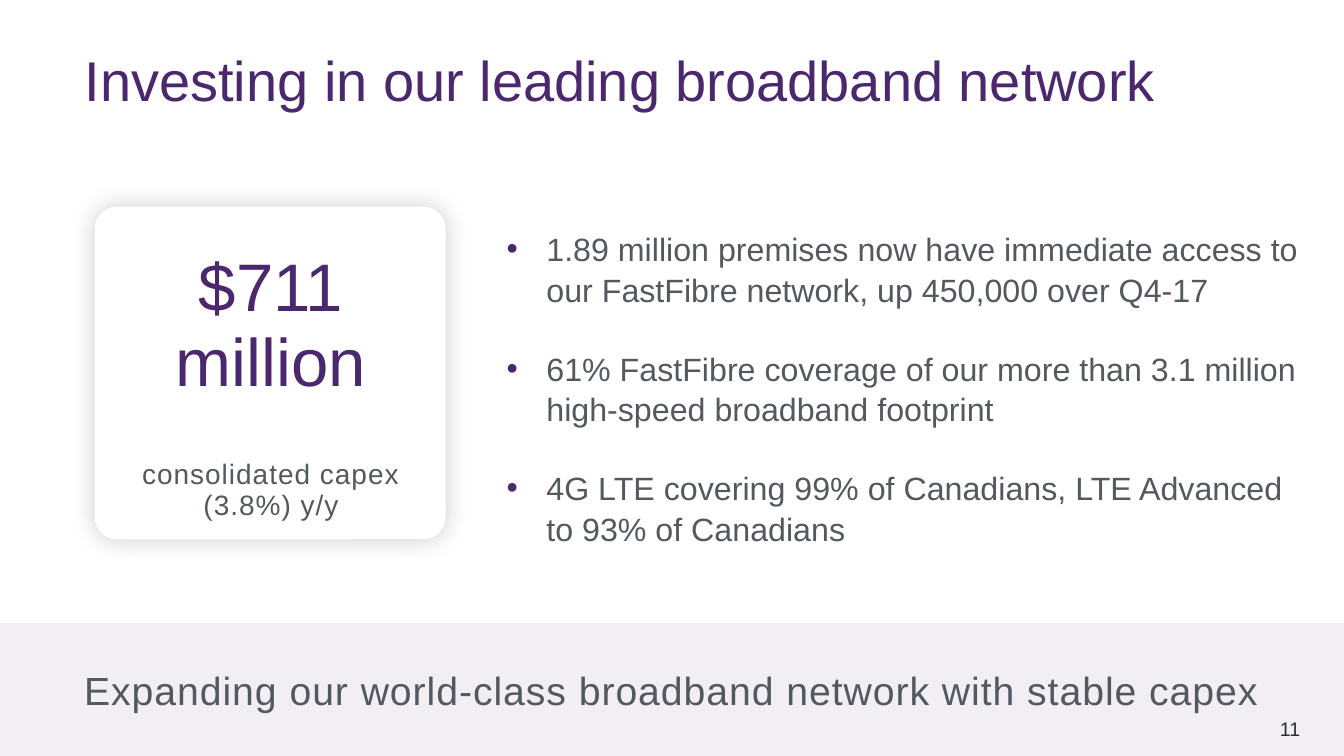
from lxml import etree
from pptx import Presentation
from pptx.dml.color import RGBColor
from pptx.enum.shapes import MSO_SHAPE
from pptx.enum.text import MSO_ANCHOR, PP_ALIGN
from pptx.oxml.ns import qn
from pptx.util import Cm, Pt

RECTANGLE, ROUNDED = MSO_SHAPE.RECTANGLE, MSO_SHAPE.ROUNDED_RECTANGLE
TOP, MIDDLE = MSO_ANCHOR.TOP, MSO_ANCHOR.MIDDLE
LEFT, CENTER, RIGHT = PP_ALIGN.LEFT, PP_ALIGN.CENTER, PP_ALIGN.RIGHT
TITLE_ONLY = 5
PLAIN_TABLE = "{2D5ABB26-0587-4C30-8999-92F81FD0307C}"
FONT = "Arial"
COLORS = {
    "purple": "4B286D",
    "grey": "54595F",
    "ink": "2A2C2E",
    "band": "F2EFF4",
    "white": "FFFFFF",
    "shadow": "000000",
}


def add_xml(parent, tag, **attributes):
    return etree.SubElement(parent, qn(tag), attributes)


class SlideBuilder:
    def __init__(self, presentation):
        self.slide = presentation.slides.add_slide(
            presentation.slide_layouts[TITLE_ONLY])

    def add_lines(self, frame, lines, size, color, align=LEFT, anchor=TOP, spacing=0):
        """Fill a text frame with one paragraph per line."""
        frame.word_wrap = True
        frame.vertical_anchor = anchor
        for index, line in enumerate(lines):
            paragraph = frame.paragraphs[0] if index == 0 else frame.add_paragraph()
            paragraph.alignment = align
            run = paragraph.add_run()
            run.text = line
            run.font.name = FONT
            run.font.size = Pt(size)
            run.font.color.rgb = RGBColor.from_string(COLORS[color])
            if spacing:
                run._r.get_or_add_rPr().set("spc", str(spacing))

    def title(self, box, text):
        shape = self.slide.shapes.title
        shape.left, shape.top, shape.width, shape.height = map(Cm, box)
        self.add_lines(shape.text_frame, [text], 40, "purple")

    def panel(self, kind, box, color):
        shape = self.slide.shapes.add_shape(kind, *map(Cm, box))
        shape.shadow.inherit = False
        shape.fill.solid()
        shape.fill.fore_color.rgb = RGBColor.from_string(COLORS[color])
        shape.line.fill.background()
        return shape

    def card(self, box):
        """White rounded card with a soft shadow on all sides."""
        shape = self.panel(ROUNDED, box, "white")
        shape.adjustments[0] = 0.067
        effects = shape._element.spPr.find(qn("a:effectLst"))
        shadow = add_xml(effects, "a:outerShdw", blurRad=str(Pt(18)),
                         dist="0", dir="0", algn="ctr", rotWithShape="0")
        shade = add_xml(shadow, "a:srgbClr", val=COLORS["shadow"])
        add_xml(shade, "a:alpha", val="20000")

    def text(self, box, lines, size, color, **style):
        frame = self.slide.shapes.add_textbox(*map(Cm, box)).text_frame
        self.add_lines(frame, lines, size, color, **style)
        return frame

    def bullets(self, box, lines):
        frame = self.text(box, lines, 23, "grey")
        for paragraph in frame.paragraphs:
            paragraph.line_spacing = 1.05
            paragraph.space_after = Pt(27.5)
            properties = paragraph._p.get_or_add_pPr()
            properties.set("marL", str(Cm(1)))
            properties.set("indent", str(-Cm(1)))
            bullet_color = add_xml(properties, "a:buClr")
            add_xml(bullet_color, "a:srgbClr", val=COLORS["purple"])
            add_xml(properties, "a:buFont", typeface=FONT)
            add_xml(properties, "a:buChar", char="•")

    def figure_table(self, left, top, width, rows):
        """One-column table; a row is (height, text style or None)."""
        height = sum(row_height for row_height, _ in rows)
        table_frame = self.slide.shapes.add_table(
            len(rows), 1, *map(Cm, (left, top, width, height)))
        table = table_frame.table
        table.first_row = table.horz_banding = False
        table._tbl.tblPr.find(qn("a:tableStyleId")).text = PLAIN_TABLE
        for index, (row_height, style) in enumerate(rows):
            table.rows[index].height = Cm(row_height)
            cell = table.cell(index, 0)
            cell.fill.background()
            cell.margin_left = cell.margin_right = Cm(0.38)
            cell.margin_top = cell.margin_bottom = Cm(0.13 if style else 0)
            if style:
                cell.vertical_anchor = MIDDLE
                self.add_lines(cell.text_frame, align=CENTER, **style)
            else:
                add_xml(cell.text_frame.paragraphs[0]._p, "a:endParaRPr", sz="800")


def main():
    presentation = Presentation()
    presentation.slide_width, presentation.slide_height = Cm(33.87), Cm(19.05)
    builder = SlideBuilder(presentation)

    # Closing message band
    band = builder.panel(RECTANGLE, (0, 15.7, 33.87, 3.35), "band")
    builder.add_lines(band.text_frame,
                      ["Expanding our world-class broadband network with stable capex"],
                      28, "grey", align=CENTER, anchor=MIDDLE, spacing=70)

    # Title
    builder.title((1.88, 1.02, 31.52, 1.96),
                  "Investing in our leading broadband network")

    # Capex card
    builder.card((2.39, 5.21, 8.84, 8.38))
    builder.figure_table(2.41, 5.21, 8.84, [
        (0.48, None),
        (5.03, {"lines": ["$711", "million"], "size": 48, "color": "purple"}),
        (0.48, None),
        (2.31, {"lines": ["consolidated capex (3.8%) y/y"], "size": 20,
                "color": "grey", "spacing": 70}),
    ])

    # Network highlights
    builder.bullets((12.52, 5.61, 20.85, 8.13), [
        "1.89 million premises now have immediate access to our FastFibre "
        "network, up 450,000 over Q4-17",
        "61% FastFibre coverage of our more than 3.1 million high-speed "
        "broadband footprint",
        "4G LTE covering 99% of Canadians, LTE Advanced to 93% of Canadians",
    ])

    # Page number
    builder.text((31.06, 17.65, 1.96, 1.4), ["11"], 14, "ink",
                 align=RIGHT, anchor=MIDDLE)

    presentation.save("out.pptx")


if __name__ == "__main__":
    main()
